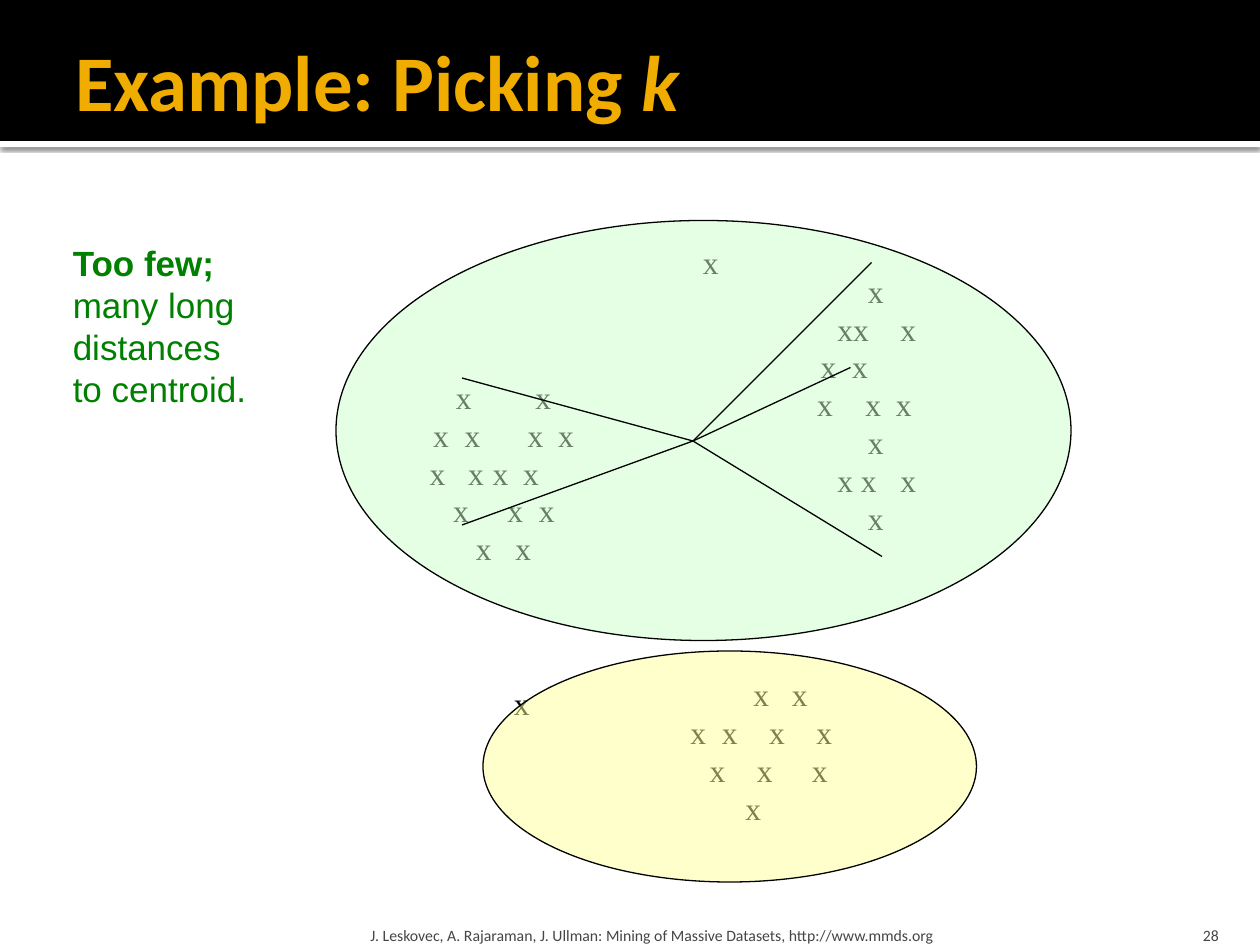
from lxml import etree
from pptx import Presentation
from pptx.dml.color import RGBColor
from pptx.enum.shapes import MSO_CONNECTOR, MSO_SHAPE
from pptx.enum.text import MSO_ANCHOR, PP_ALIGN
from pptx.oxml import parse_xml
from pptx.oxml.ns import nsdecls, qn
from pptx.util import Pt

BLACK = RGBColor(0x00, 0x00, 0x00)
WHITE = RGBColor(0xFF, 0xFF, 0xFF)
GOLD = RGBColor(0xF0, 0xAD, 0x00)
GREY = RGBColor(0x45, 0x45, 0x45)
GREEN = RGBColor(0x00, 0x80, 0x00)
MINT = RGBColor(0xCC, 0xFF, 0xCC)
YELLOW = RGBColor(0xFF, 0xFF, 0x99)

# Each row: its marks, and the centre of each mark from the left of the box.
LEFT_ROWS = [
    ("x x", (49, 94.5)),
    ("x x x x", (36, 54, 90, 107.5)),
    ("x x x x", (34, 56, 70, 87.5)),
    ("x x x", (47.5, 78.5, 96.5)),
    ("x x", (60.5, 83)),
]
RIGHT_ROWS = [
    ("x", (68.5,)),
    ("xx x", (55.5, 87)),
    ("x x", (41.5, 59.5)),
    ("x x x", (39.5, 67, 84.5)),
    ("x", (68.5,)),
    ("x x x", (51, 64.5, 87)),
    ("x", (68.5,)),
]
BOTTOM_ROWS = [
    ("x x", (75, 97)),
    ("x x x x", (39, 57, 84, 111)),
    ("x x x", (50, 77, 108.5)),
    ("x", (70.5,)),
]
CENTROID = (396, 252)
FAR_POINTS = [(264, 216), (264, 300), (504, 318), (486, 210), (498, 150)]


def add_filled(s, kind, box, color):
    shape = s.shapes.add_shape(kind, *map(Pt, box))
    shape.shadow.inherit = False
    shape.fill.solid()
    shape.fill.fore_color.rgb = color
    shape.line.fill.background()
    return shape


def add_bar_shadow(bar):
    effects = bar._element.spPr.find(qn("a:effectLst"))
    effects.append(parse_xml(
        f'<a:outerShdw {nsdecls("a")} blurRad="{Pt(2.5)}" dist="{Pt(0.8)}" '
        'dir="5400000" algn="tl" rotWithShape="0"><a:srgbClr val="000000">'
        '<a:alpha val="60000"/></a:srgbClr></a:outerShdw>'))


def add_cluster_ellipse(s, box, color):
    """Half-transparent ellipse with a thin black outline."""
    shape = add_filled(s, MSO_SHAPE.OVAL, box, color)
    clr = shape._element.spPr.find(qn("a:solidFill"))[0]
    etree.SubElement(clr, qn("a:alpha")).set("val", "50000")
    shape.line.color.rgb = BLACK
    shape.line.width = Pt(0.75)


def add_frame(s, box, insets, anchor=MSO_ANCHOR.TOP, wrap=False):
    tf = s.shapes.add_textbox(*map(Pt, box)).text_frame
    tf.margin_left, tf.margin_top, tf.margin_right, tf.margin_bottom = map(Pt, insets)
    tf.vertical_anchor = anchor
    tf.word_wrap = wrap
    return tf


def style(p, name, size, color, bold=False):
    p.font.name = name
    p.font.size = Pt(size)
    p.font.color.rgb = color
    p.font.bold = bold


def add_title(s):
    tf = add_frame(s, (36, 12.5, 648, 66), (7.2, 3.6, 3.6, 3.6), MSO_ANCHOR.MIDDLE, True)
    p = tf.paragraphs[0]
    p.add_run().text = "Example: Picking "
    r = p.add_run()
    r.text = "k"
    r.font.italic = True
    style(p, "Calibri", 45, GOLD, True)


def add_footer(s, text, box, side, align):
    tf = add_frame(s, box, (side, 3.6, side, 0), MSO_ANCHOR.BOTTOM, True)
    p = tf.paragraphs[0]
    p.text = text
    p.alignment = align
    style(p, "Calibri", 9, GREY)


def add_points(s, box, rows):
    """Rows of marks, each centred on its own tab stop."""
    tf = add_frame(s, box, (0, 0, 0, 0), MSO_ANCHOR.MIDDLE, True)
    for i, (marks, stops) in enumerate(rows):
        p = tf.add_paragraph() if i else tf.paragraphs[0]
        p.text = "".join("\t" + mark for mark in marks.split())
        p.line_spacing = Pt(21.6)
        tabs = etree.SubElement(p._p.get_or_add_pPr(), qn("a:tabLst"))
        for stop in stops:
            etree.SubElement(tabs, qn("a:tab"), pos=str(Pt(stop)), algn="ctr")
        style(p, "Times New Roman", 18, BLACK)


def add_lines(s, box, lines, name, size, color, bold_first=False):
    tf = add_frame(s, box, (7.2, 3.6, 7.2, 3.6))
    for i, line in enumerate(lines):
        p = tf.add_paragraph() if i else tf.paragraphs[0]
        p.text = line
        style(p, name, size, color, bold_first and i == 0)


def add_distance(s, start, end):
    line = s.shapes.add_connector(MSO_CONNECTOR.STRAIGHT, *map(Pt, start + end))
    line.line.color.rgb = BLACK
    line.line.width = Pt(0.75)
    etree.SubElement(line._element.spPr, qn("a:effectLst"))


def main():
    prs = Presentation()
    prs.slide_width, prs.slide_height = Pt(720), Pt(540)
    s = prs.slides.add_slide(prs.slide_layouts[6])

    add_bar_shadow(add_filled(s, MSO_SHAPE.RECTANGLE, (0, 80.5, 720, 3.6), WHITE))
    add_filled(s, MSO_SHAPE.RECTANGLE, (0, 0, 720, 80.5), BLACK)
    add_title(s)
    add_footer(s, "J. Leskovec, A. Rajaraman, J. Ullman: Mining of Massive Datasets, "
               "http://www.mmds.org", (208, 518.4, 433.5, 21.6), 3.6, PP_ALIGN.LEFT)
    add_footer(s, "28", (646, 518.4, 57.6, 21.6), 7.2, PP_ALIGN.RIGHT)

    add_points(s, (216, 180, 144, 180), LEFT_ROWS)
    add_points(s, (432, 120, 138, 222), RIGHT_ROWS)
    add_points(s, (360, 366, 150, 126), BOTTOM_ROWS)
    for left, top in [(394.5, 135.5), (286.5, 387.5)]:
        add_lines(s, (left, top, 26.5, 36), ["x"], "Times New Roman", 18, BLACK)

    add_cluster_ellipse(s, (192, 126, 420, 240), MINT)
    add_cluster_ellipse(s, (276, 372, 282, 132), YELLOW)
    for point in FAR_POINTS:
        add_distance(s, CENTROID, point)
    add_lines(s, (34.5, 134.5, 114.5, 104.5),
              ["Too few;", "many long", "distances", "to centroid."],
              "Arial", 20, GREEN, bold_first=True)

    prs.save("out.pptx")


if __name__ == "__main__":
    main()
